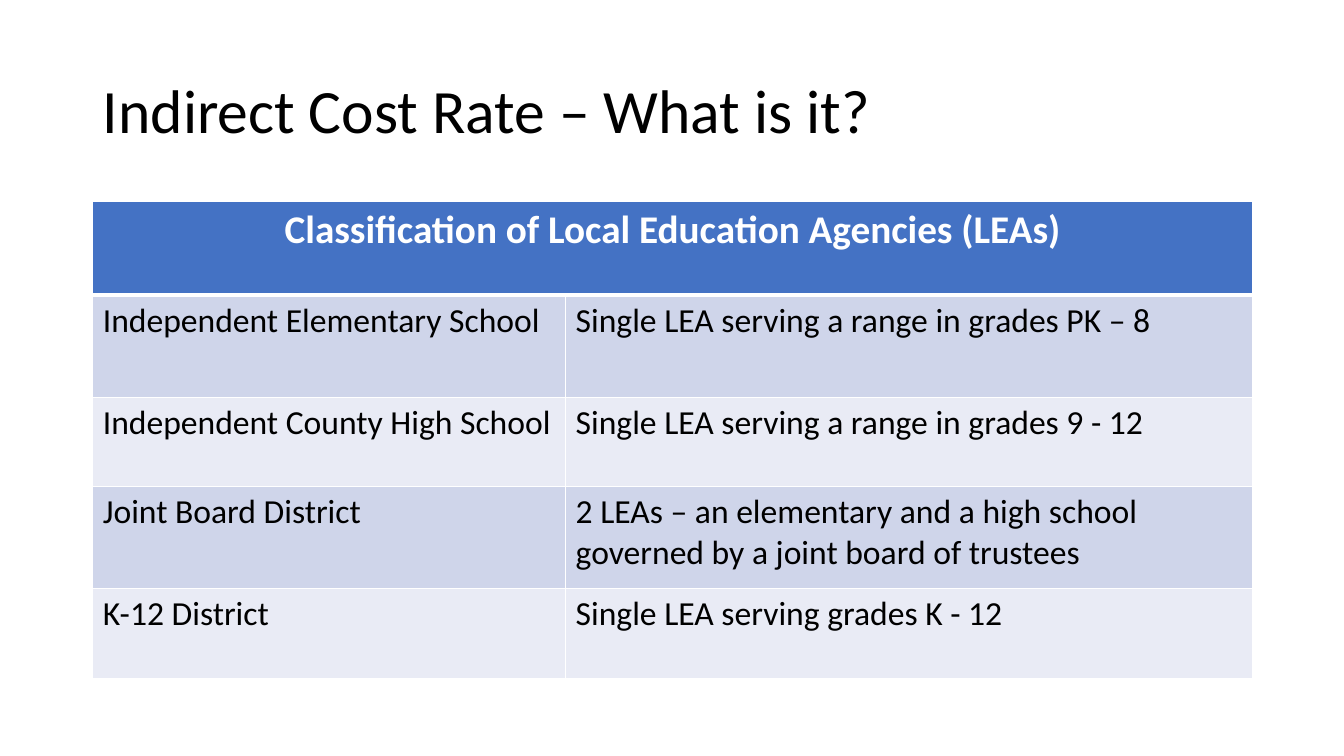
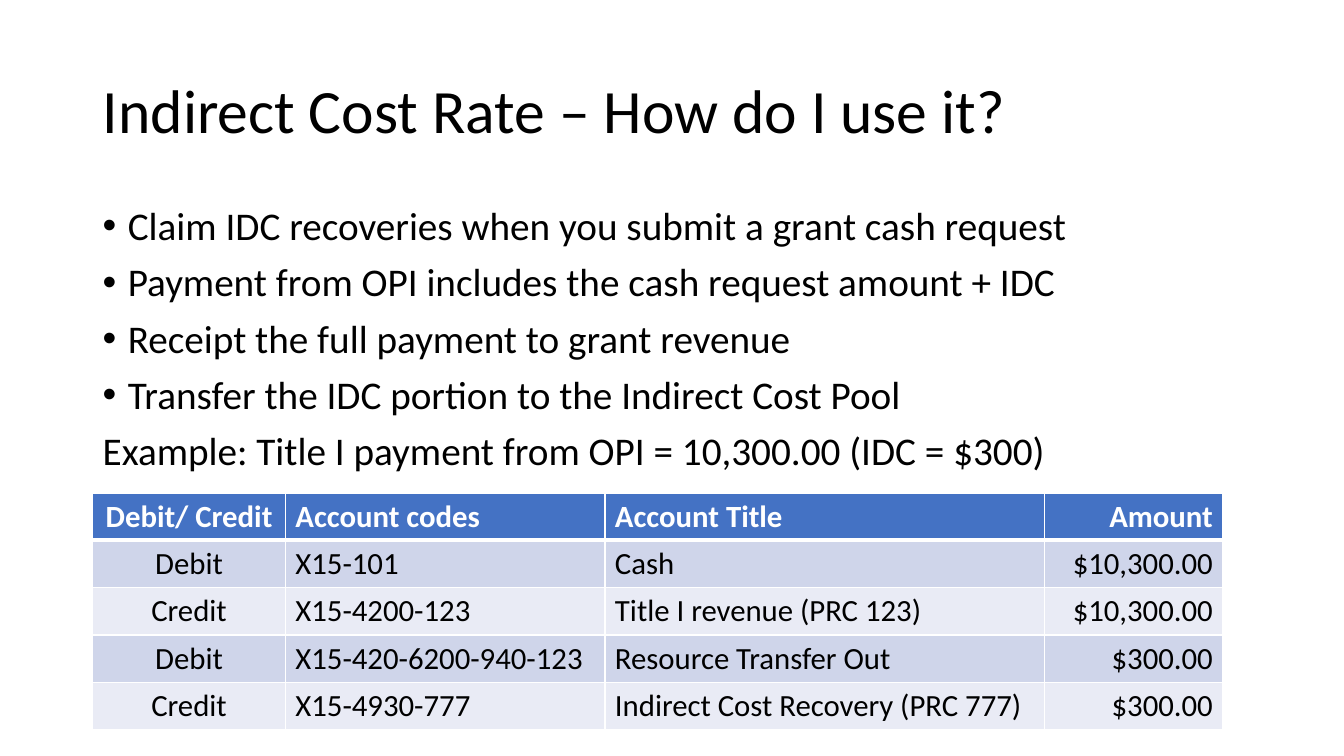
from lxml import etree
from pptx import Presentation
from pptx.dml.color import RGBColor
from pptx.enum.text import MSO_ANCHOR, MSO_AUTO_SIZE, PP_ALIGN
from pptx.oxml.ns import qn
from pptx.util import Inches, Pt

LEFT, CENTER, RIGHT = PP_ALIGN.LEFT, PP_ALIGN.CENTER, PP_ALIGN.RIGHT
TITLE_ONLY = 5
FONT = "Calibri"
COLORS = {
    "text": "000000",
    "white": "FFFFFF",
    "header": "4472C4",
    "band_dark": "CFD5EA",
    "band_light": "E9EBF5",
}
MARGIN, CONTENT_TOP, CONTENT_WIDTH = 0.92, 2, 11.5
BULLET_INDENT = 0.25

AGENCIES = {
    "title": "Indirect Cost Rate – What is it?",
    "rows": [
        ("Classification of Local Education Agencies (LEAs)", ""),
        ("Independent Elementary School", "Single LEA serving a range in grades PK – 8"),
        ("Independent County High School", "Single LEA serving a range in grades 9 - 12"),
        ("Joint Board District",
         "2 LEAs – an elementary and a high school governed by a joint board of trustees"),
        ("K-12 District", "Single LEA serving grades K - 12"),
    ],
    "widths": [4.69, 6.81],
    "heights": [0.93, 1.01, 0.89, 1.01, 0.89],
}
USAGE = {
    "title": "Indirect Cost Rate – How do I use it?",
    "bullets": [
        "Claim IDC recoveries when you submit a grant cash request",
        "Payment from OPI includes the cash request amount + IDC",
        "Receipt the full payment to grant revenue",
        "Transfer the IDC portion to the Indirect Cost Pool",
    ],
    "example": "Example: Title I payment from OPI = 10,300.00 (IDC = $300)",
    "rows": [
        ("Debit/ Credit", "Account codes", "Account Title", "Amount"),
        ("Debit", "X15-101", "Cash", "$10,300.00"),
        ("Credit", "X15-4200-123", "Title I revenue (PRC 123)", "$10,300.00"),
        ("Debit", "X15-420-6200-940-123", "Resource Transfer Out", "$300.00"),
        ("Credit", "X15-4930-777", "Indirect Cost Recovery (PRC 777)", "$300.00"),
    ],
    "widths": [1.91, 3.17, 4.36, 1.77],
    "heights": [0.47] * 5,
    "aligns": [CENTER, LEFT, LEFT, RIGHT],
}


def rgb(name):
    return RGBColor.from_string(COLORS[name])


def write(p, text, size, color="text", bold=False, align=LEFT, line=None, before=None):
    p.alignment = align
    if line is not None:
        p.line_spacing = line
    if before is not None:
        p.space_before = Pt(before)
    r = p.add_run()
    r.text = text
    r.font.name = FONT
    r.font.size = Pt(size)
    r.font.bold = bold
    r.font.color.rgb = rgb(color)


def add_bullet(p):
    pPr = p._p.get_or_add_pPr()
    pPr.set("marL", str(Inches(BULLET_INDENT)))
    pPr.set("indent", str(-Inches(BULLET_INDENT)))
    etree.SubElement(pPr, qn("a:buFont"), typeface="Arial")
    etree.SubElement(pPr, qn("a:buChar"), char="•")


def set_borders(cell, top, bottom):
    """Draw white cell borders, with top and bottom widths in points."""
    tcPr = cell._tc.get_or_add_tcPr()
    sides = {"L": 1, "R": 1, "T": top, "B": bottom}
    for i, (side, width) in enumerate(sides.items()):
        ln = etree.Element(qn(f"a:ln{side}"), w=str(Pt(width)))
        fill = etree.SubElement(ln, qn("a:solidFill"))
        etree.SubElement(fill, qn("a:srgbClr"), val=COLORS["white"])
        tcPr.insert(i, ln)


def add_titled_slide(prs, title):
    s = prs.slides.add_slide(prs.slide_layouts[TITLE_ONLY])
    sp = s.shapes.title
    sp.left, sp.top = Inches(MARGIN), Inches(0.4)
    sp.width, sp.height = Inches(CONTENT_WIDTH), Inches(1.45)
    tf = sp.text_frame
    tf.auto_size = MSO_AUTO_SIZE.NONE
    tf.vertical_anchor = MSO_ANCHOR.MIDDLE
    write(tf.paragraphs[0], title, 44, line=0.9)
    return s


def add_body(s, bullets, closing):
    box = s.shapes.add_textbox(Inches(MARGIN), Inches(CONTENT_TOP),
                               Inches(CONTENT_WIDTH), Inches(2.85))
    tf = box.text_frame
    tf.word_wrap = True
    for i, text in enumerate([*bullets, closing]):
        p = tf.add_paragraph() if i else tf.paragraphs[0]
        write(p, text, 28, line=0.9, before=10)
        if i < len(bullets):
            add_bullet(p)


def add_banded_table(s, data, top, header_size, body_size):
    rows, widths, heights = data["rows"], data["widths"], data["heights"]
    aligns = data.get("aligns", [LEFT] * len(widths))
    table = s.shapes.add_table(len(rows), len(widths), Inches(MARGIN), Inches(top),
                               Inches(sum(widths)), Inches(sum(heights))).table
    for column, width in zip(table.columns, widths):
        column.width = Inches(width)
    for i, (row, height) in enumerate(zip(rows, heights)):
        table.rows[i].height = Inches(height)
        header = i == 0
        fill = "header" if header else "band_dark" if i % 2 else "band_light"
        for j, text in enumerate(row):
            cell = table.cell(i, j)
            cell.fill.solid()
            cell.fill.fore_color.rgb = rgb(fill)
            set_borders(cell, top=3 if i == 1 else 1, bottom=3 if header else 1)
            if text:
                write(cell.text_frame.paragraphs[0], text,
                      header_size if header else body_size,
                      color="white" if header else "text", bold=header, align=aligns[j])
    return table


def main():
    prs = Presentation()
    prs.slide_width, prs.slide_height = Inches(13.33), Inches(7.5)

    s = add_titled_slide(prs, AGENCIES["title"])
    table = add_banded_table(s, AGENCIES, CONTENT_TOP, header_size=28, body_size=24)
    table.cell(0, 0).merge(table.cell(0, 1))
    table.cell(0, 0).text_frame.paragraphs[0].alignment = CENTER

    s = add_titled_slide(prs, USAGE["title"])
    add_body(s, USAGE["bullets"], USAGE["example"])
    add_banded_table(s, USAGE, 4.89, header_size=22, body_size=22)

    prs.save("out.pptx")


if __name__ == "__main__":
    main()
